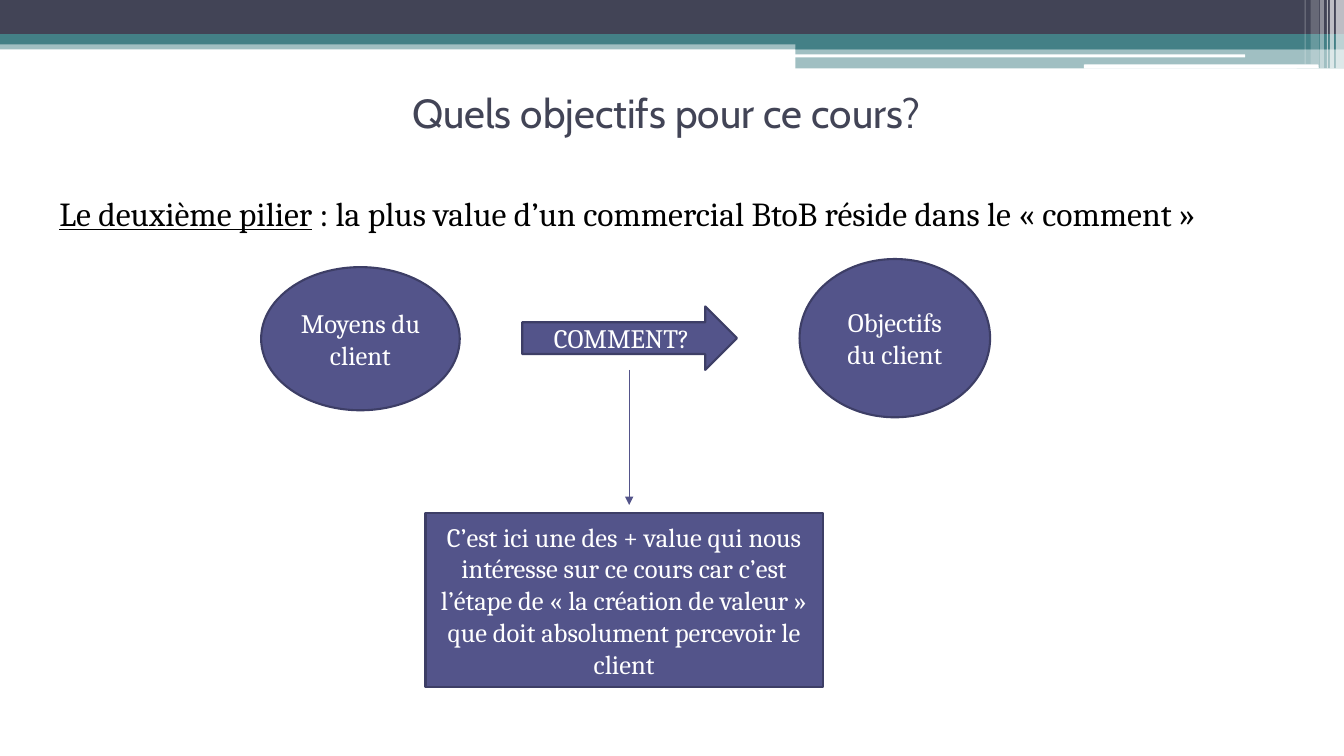
from dataclasses import dataclass

from lxml.etree import SubElement
from pptx import Presentation
from pptx.dml.color import RGBColor
from pptx.enum.shapes import MSO_CONNECTOR, MSO_SHAPE as Preset
from pptx.enum.text import MSO_ANCHOR as Anchor, PP_ALIGN as Align
from pptx.oxml.ns import qn
from pptx.shapes.autoshape import Shape
from pptx.slide import Slide
from pptx.text.text import TextFrame
from pptx.util import Inches, Pt

WHITE = RGBColor(0xFF, 0xFF, 0xFF)
BLACK = RGBColor(0x00, 0x00, 0x00)
SLATE = RGBColor(0x42, 0x44, 0x56)
TEAL = RGBColor(0x43, 0x80, 0x86)
INDIGO = RGBColor(0x53, 0x54, 0x8A)
DARK_INDIGO = RGBColor(0x3D, 0x3E, 0x66)


@dataclass(frozen=True)
class Box:
    left: float
    top: float
    width: float
    height: float

    def lengths(self) -> tuple[Inches, ...]:
        return tuple(Inches(n) for n in (self.left, self.top, self.width, self.height))


@dataclass(frozen=True)
class Band:
    box: Box
    color: RGBColor
    opacity: int = 100
    preset: Preset = Preset.RECTANGLE


@dataclass(frozen=True)
class Idea:
    box: Box
    preset: Preset
    text: str


# Header stripes, then the pale vertical bars in the corner
BANDS = [
    Band(Box(0, 0.4, 13.33, 0.09), TEAL, 50),
    Band(Box(0, 0, 13.33, 0.34), SLATE),
    Band(Box(0, 0.34, 13.33, 0.1), TEAL),
    Band(Box(7.89, 0.39, 5.44, 0.1), TEAL),
    Band(Box(7.89, 0.48, 5.44, 0.2), TEAL, 50),
    Band(Box(7.88, 0.54, 4.47, 0.03), WHITE, preset=Preset.ROUNDED_RECTANGLE),
    Band(Box(10.75, 0.64, 2.33, 0.04), WHITE, preset=Preset.ROUNDED_RECTANGLE),
] + [
    Band(Box(left, 0, width, height), WHITE, opacity)
    for left, width, height, opacity in [
        (13.25, 0.08, 0.68, 65),
        (13.19, 0.04, 0.68, 65),
        (13.16, 0.01, 0.68, 60),
        (13.09, 0.04, 0.68, 40),
        (13.0, 0.08, 0.64, 20),
        (12.94, 0.01, 0.64, 30),
    ]
]

IDEAS = [
    Idea(Box(2.59, 2.65, 1.97, 1.42), Preset.OVAL, "Moyens du client"),
    Idea(Box(5.18, 3.04, 2.13, 0.63), Preset.RIGHT_ARROW, "COMMENT?"),
    Idea(Box(7.93, 2.57, 1.89, 1.57), Preset.OVAL, "Objectifs du client"),
    Idea(Box(4.22, 5.09, 3.94, 1.73), Preset.RECTANGLE,
         "C’est ici une des + value qui nous intéresse sur ce cours car c’est "
         "l’étape de « la création de valeur » que doit absolument percevoir le client"),
]


def write(frame: TextFrame, text: str, *, size: float, color: RGBColor,
          font: str = "Cambria", align: Align = Align.CENTER,
          anchor: Anchor = Anchor.MIDDLE, underlined: str = "",
          hanging: bool = False) -> None:
    """Fill a frame with one paragraph, opening with an optional underlined part."""
    frame.word_wrap = True
    frame.vertical_anchor = anchor
    paragraph = frame.paragraphs[0]
    paragraph.alignment = align
    if hanging:
        paragraph.space_before = Pt(3)
        properties = paragraph._p.get_or_add_pPr()
        properties.set("marL", str(Inches(0.4)))
        properties.set("indent", str(Inches(-0.28)))
    for part in filter(None, (underlined, text)):
        run = paragraph.add_run()
        run.text = part
        run.font.name = font
        run.font.size = Pt(size)
        run.font.color.rgb = color
        run.font.underline = part == underlined


def add_filled(slide: Slide, preset: Preset, box: Box, color: RGBColor) -> Shape:
    shape = slide.shapes.add_shape(preset, *box.lengths())
    shape.shadow.inherit = False
    shape.fill.solid()
    shape.fill.fore_color.rgb = color
    shape.line.fill.background()
    return shape


def add_band(slide: Slide, band: Band) -> None:
    shape = add_filled(slide, band.preset, band.box, band.color)
    if band.opacity < 100:
        rgb = shape._element.spPr.find(qn("a:solidFill")).find(qn("a:srgbClr"))
        SubElement(rgb, qn("a:alpha")).set("val", str(band.opacity * 1000))


def add_idea(slide: Slide, idea: Idea) -> None:
    shape = add_filled(slide, idea.preset, idea.box, INDIGO)
    shape.line.color.rgb = DARK_INDIGO
    shape.line.width = Pt(1.5)
    write(shape.text_frame, idea.text, size=19, color=WHITE)


def add_down_arrow(slide: Slide, x: float, top: float, bottom: float) -> None:
    arrow = slide.shapes.add_connector(
        MSO_CONNECTOR.STRAIGHT, Inches(x), Inches(top), Inches(x), Inches(bottom))
    arrow.line.color.rgb = INDIGO
    arrow.line.width = Pt(0.75)
    SubElement(arrow.line._get_or_add_ln(), qn("a:tailEnd")).set("type", "triangle")
    SubElement(arrow._element.spPr, qn("a:effectLst"))


def main() -> None:
    presentation = Presentation()
    presentation.slide_width = Inches(13.33)
    presentation.slide_height = Inches(7.5)
    slide = presentation.slides.add_slide(presentation.slide_layouts[6])

    # Header decoration
    for band in BANDS:
        add_band(slide, band)

    # Title and statement
    title = slide.shapes.add_textbox(*Box(0.77, 0.64, 11.56, 0.94).lengths())
    write(title.text_frame, "Quels objectifs pour ce cours?", size=29, color=SLATE,
          font="Cabin", hanging=True)
    pillar = slide.shapes.add_textbox(*Box(0.37, 1.86, 12.36, 5.64).lengths())
    write(pillar.text_frame,
          " : la plus value d’un commercial BtoB réside dans le « comment »",
          underlined="Le deuxième pilier", size=24, color=BLACK,
          align=Align.LEFT, anchor=Anchor.TOP, hanging=True)

    # From means to goals, and what the "how" brings
    for idea in IDEAS:
        add_idea(slide, idea)
    add_down_arrow(slide, 6.24, 3.67, 5.01)

    presentation.save("out.pptx")


if __name__ == "__main__":
    main()
